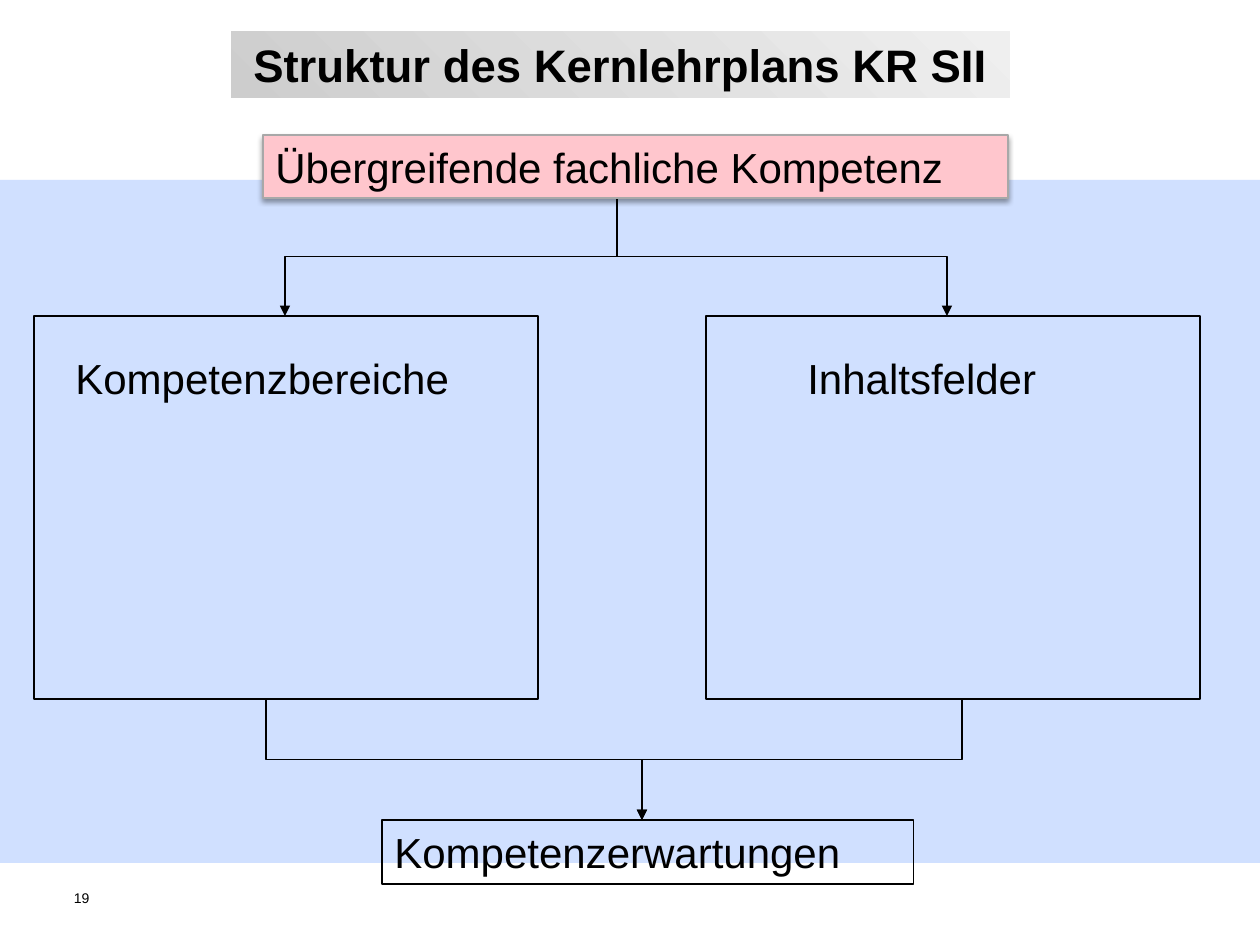
from lxml.etree import SubElement
from pptx import Presentation
from pptx.dml.color import RGBColor
from pptx.enum.shapes import MSO_CONNECTOR as CONN, MSO_SHAPE as SHAPE
from pptx.enum.text import MSO_ANCHOR as ANCHOR, MSO_AUTO_SIZE as AUTO, PP_ALIGN as ALIGN
from pptx.oxml.ns import qn
from pptx.util import Emu, Pt

PX = 914400 // 126
BLACK = RGBColor(0, 0, 0)
BLUE = RGBColor(0x66, 0x99, 0xFF)
PINK = RGBColor(0xFF, 0xC6, 0xCD)
GREY = RGBColor(0xA8, 0xA8, 0xA8)
GRADIENT = (RGBColor(0xCD, 0xCD, 0xCD), RGBColor(0xEF, 0xEF, 0xEF))


def px(*values):
    return [Emu(round(v * PX)) for v in values]


def add_text(sp, text, size=24, bold=False, align=ALIGN.LEFT, anchor=ANCHOR.TOP, inset=None):
    tf = sp.text_frame
    tf.word_wrap = True
    tf.auto_size = AUTO.NONE
    tf.vertical_anchor = anchor
    if inset is not None:
        tf.margin_left = tf.margin_right = tf.margin_top = tf.margin_bottom = inset
    p = tf.paragraphs[0]
    p.alignment = align
    r = p.add_run()
    r.text = text
    r.font.name, r.font.size, r.font.bold = "Arial", Pt(size), bold
    r.font.color.rgb = BLACK


def add_label(s, box, text, **fmt):
    add_text(s.shapes.add_textbox(*px(*box)), text, **fmt)


def add_box(s, box, fill=None, line=BLACK):
    sp = s.shapes.add_shape(SHAPE.RECTANGLE, *px(*box))
    sp.shadow.inherit = False
    if fill is None:
        sp.fill.background()
    else:
        sp.fill.solid()
        sp.fill.fore_color.rgb = fill
    if line is None:
        sp.line.fill.background()
    else:
        sp.line.color.rgb = line
        sp.line.width = Pt(0.75)
    return sp


def add_elbow(s, x1, y1, x2, y2):
    """Arrow that runs down, across and down again: a turned elbow connector."""
    w, h = y2 - y1, abs(x2 - x1)
    left, top = (x1 + x2 - w) / 2, (y1 + y2 - h) / 2
    c = s.shapes.add_connector(CONN.ELBOW, *px(left, top, left + w, top + h))
    c.line.color.rgb = BLACK
    c.line.width = Pt(0.75)
    SubElement(c.line._get_or_add_ln(), qn("a:tailEnd"), type="triangle")
    props = c._element.spPr
    SubElement(props, qn("a:effectLst"))
    xfrm = props.find(qn("a:xfrm"))
    if x2 < x1:
        xfrm.set("rot", "5400000")
    else:
        xfrm.set("rot", "16200000")
        xfrm.set("flipH", "1")


def add_band(s, box):
    sp = add_box(s, box, BLUE, None)
    color = sp._element.spPr.find(qn("a:solidFill"))[0]
    SubElement(color, qn("a:alpha"), val="30000")


def add_title(s, box, text):
    sp = s.shapes.title
    sp.left, sp.top, sp.width, sp.height = px(*box)
    sp.fill.gradient()
    sp.fill.gradient_angle = 45
    for stop, color, position in zip(sp.fill.gradient_stops, GRADIENT, (0, 1)):
        stop.color.rgb = color
        stop.position = position
    add_text(sp, text, size=26, bold=True, align=ALIGN.CENTER, anchor=ANCHOR.MIDDLE)


def add_top_box(s, box, text):
    sp = add_box(s, box, PINK, GREY)
    effects = sp._element.spPr.find(qn("a:effectLst"))
    shadow = SubElement(effects, qn("a:outerShdw"), blurRad=str(Pt(3.1)),
                        dist=str(Pt(1.6)), dir="5400000", rotWithShape="0")
    color = SubElement(shadow, qn("a:srgbClr"), val="000000")
    SubElement(color, qn("a:alpha"), val="38000")
    add_text(sp, text)


def add_panel(s, box, text, indent, width):
    x, y, _, _ = box
    add_box(s, box)
    add_label(s, (x + indent, y + 30, width, 63), text)


def add_structure(s, box):
    x, y, w, h = box
    panel_y, panel_h = y + 181, 383
    panel_end, last_y = panel_y + panel_h, y + h - 64

    # Arrows from the top box to the panels
    for target in (x + 251, x + 913):
        add_elbow(s, x + 583, y + 62, target, panel_y)
    # Arrows from the panels to the bottom box
    for start in (x + 232, x + 928):
        add_elbow(s, start, panel_end, x + 608, last_y)

    # Panels and boxes
    add_panel(s, (x, panel_y, 504, panel_h), "Kompetenzbereiche", 29, 451)
    add_panel(s, (x + w - 494, panel_y, 494, panel_h), "Inhaltsfelder", 89, 368)
    add_text(add_box(s, (x + 348, last_y, 532, 64)), "Kompetenzerwartungen")
    add_top_box(s, (x + 229, y, 745, 63), "Übergreifende fachliche Kompetenz")


def main():
    prs = Presentation()
    prs.slide_width, prs.slide_height = px(1260, 945)
    s = prs.slides.add_slide(prs.slide_layouts[5])
    add_band(s, (0, 180, 1260, 683))
    add_title(s, (231, 31, 779, 67), "Struktur des Kernlehrplans KR SII")
    add_structure(s, (34, 135, 1166, 749))
    # Slide number
    add_label(s, (74, 890, 40, 47), "19", size=8, inset=0)
    prs.save("out.pptx")


if __name__ == "__main__":
    main()
